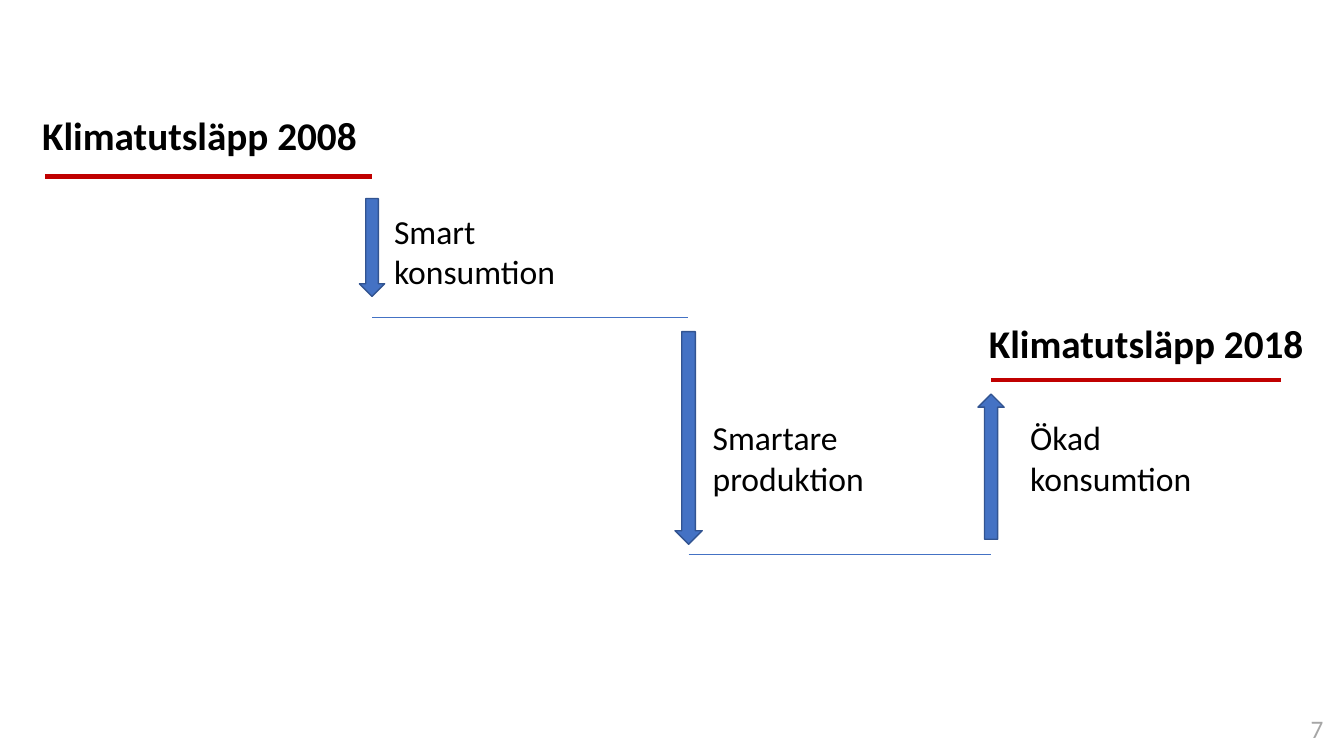
import pptx
import pptx.dml.color
import pptx.enum.shapes
import pptx.enum.text
import pptx.util
from lxml import etree
from pptx.util import Inches

SHAPE = pptx.enum.shapes.MSO_SHAPE
SLIDE_SIZE = (13.33, 7.5)
WHITE, BLACK, GREY = "FFFFFF", "000000", "A6A6A6"
RED, BLUE, DARK_BLUE = "C00000", "4472C4", "325491"

# left, right, height on the slide, colour, weight
levels = [
    (0.45, 3.69, 1.75, RED, 3),
    (3.69, 6.82, 3.15, BLUE, 0.5),
    (6.83, 9.83, 5.5, BLUE, 0.5),
    (9.83, 12.71, 3.77, RED, 3),
]

# direction, centre, top, width, height
changes = [
    (SHAPE.DOWN_ARROW, 3.69, 1.97, 0.25, 0.97),
    (SHAPE.DOWN_ARROW, 6.83, 3.29, 0.27, 2.11),
    (SHAPE.UP_ARROW, 9.83, 3.91, 0.26, 1.44),
]

# words, box, size, bold, colour
labels = [
    ("Klimatutsläpp 2008", (0.32, 1.06, 3.49, 0.57), 28, True, BLACK),
    ("Klimatutsläpp 2018", (9.71, 3.12, 3.44, 0.57), 28, True, BLACK),
    ("Smart konsumtion", (3.81, 2.04, 2.59, 0.91), 24, False, BLACK),
    ("Smartare produktion", (6.97, 4.09, 2.3, 0.91), 24, False, BLACK),
    ("Ökad konsumtion", (10.12, 4.09, 2.3, 0.91), 24, False, BLACK),
    ("7", (12.9, 7.03, 0.4, 0.4), 18, False, GREY),
]


def paint(colour_format, colour):
    colour_format.rgb = pptx.dml.color.RGBColor.from_string(colour)


def add_filled(slide, preset, box, fill, outline):
    shape = slide.shapes.add_shape(preset, *map(Inches, box))
    shape.shadow.inherit = False
    shape.fill.solid()
    paint(shape.fill.fore_color, fill)
    paint(shape.line.color, outline)
    shape.line.width = pptx.util.Pt(1)


def add_level(slide, left, right, height, colour, weight):
    """Draw the horizontal line that marks one emission level."""
    line = slide.shapes.add_connector(
        pptx.enum.shapes.MSO_CONNECTOR.STRAIGHT,
        *map(Inches, (left, height, right, height)))
    paint(line.line.color, colour)
    line.line.width = pptx.util.Pt(weight)
    etree.SubElement(line._element.spPr, pptx.oxml.ns.qn("a:effectLst"))


def add_label(slide, words, box, size, bold, colour):
    frame = slide.shapes.add_textbox(*map(Inches, box)).text_frame
    frame.word_wrap = True
    frame.auto_size = pptx.enum.text.MSO_AUTO_SIZE.SHAPE_TO_FIT_TEXT
    run = frame.paragraphs[0].add_run()
    run.text = words
    run.font.name = "Calibri"
    run.font.size = pptx.util.Pt(size)
    run.font.bold = bold
    paint(run.font.color, colour)


def main():
    deck = pptx.Presentation()
    deck.slide_width, deck.slide_height = map(Inches, SLIDE_SIZE)
    slide = deck.slides.add_slide(deck.slide_layouts[6])

    add_filled(slide, SHAPE.RECTANGLE, (0, 0, *SLIDE_SIZE), WHITE, WHITE)
    for level in levels:
        add_level(slide, *level)
    for direction, centre, top, width, height in changes:
        box = (centre - width / 2, top, width, height)
        add_filled(slide, direction, box, BLUE, DARK_BLUE)
    for label in labels:
        add_label(slide, *label)

    deck.save("out.pptx")


if __name__ == "__main__":
    main()
